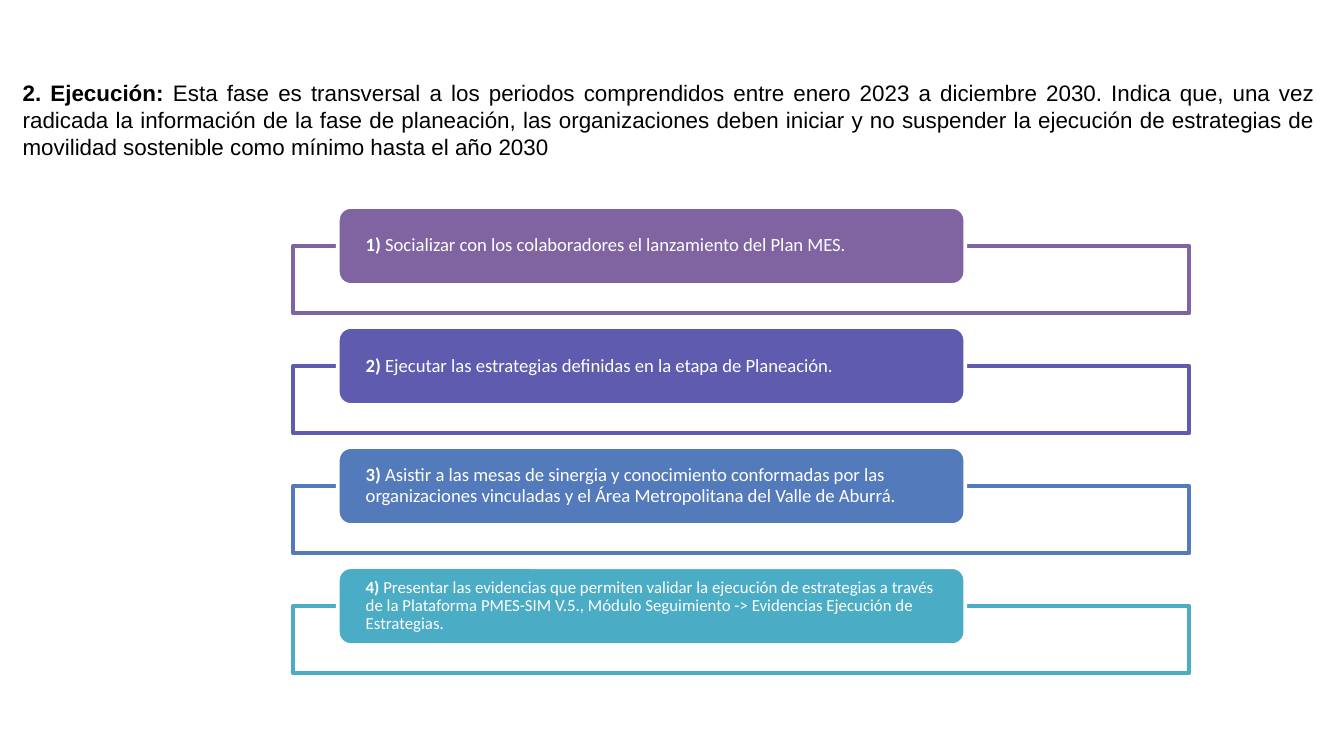
from dataclasses import dataclass

import pptx
import pptx.dml.color
import pptx.enum.shapes
import pptx.enum.text
import pptx.oxml
import pptx.oxml.ns
import pptx.util
from pptx.util import Inches


@dataclass(frozen=True)
class Theme:
    black: str = "000000"
    white: str = "FFFFFF"
    step_colors: tuple = ("8064A2", "5F5BAE", "537ABA", "4BACC6")
    intro_font: str = "Arial"
    step_font: str = "Calibri"
    intro_size: float = 12
    step_size: float = 10
    small_size: float = 9
    line_width: float = 2
    frame_opacity: int = 90


THEME = Theme()

INTRO = (
    "2. Ejecución: ",
    "Esta fase es transversal a los periodos comprendidos entre enero 2023 a diciembre 2030. "
    "Indica que, una vez radicada la información de la fase de planeación, las organizaciones "
    "deben iniciar y no suspender la ejecución de estrategias de movilidad sostenible como "
    "mínimo hasta el año 2030",
)

STEPS = [
    ("Socializar con los colaboradores el lanzamiento del Plan MES.", THEME.step_size),
    ("Ejecutar las estrategias definidas en la etapa de Planeación.", THEME.step_size),
    ("Asistir a las mesas de sinergia y conocimiento conformadas por las organizaciones "
     "vinculadas y el Área Metropolitana del Valle de Aburrá.", THEME.step_size),
    ("Presentar las evidencias que permiten validar la ejecución de estrategias a través de "
     "la Plataforma PMES-SIM V.5., Módulo Seguimiento -> Evidencias Ejecución de Estrategias.",
     THEME.small_size),
]


def rgb(color):
    return pptx.dml.color.RGBColor.from_string(color)


def add_run(paragraph, text, font, size, color, bold):
    run = paragraph.add_run()
    run.text = text
    run.font.name = font
    run.font.size = pptx.util.Pt(size)
    run.font.color.rgb = rgb(color)
    run.font.bold = bold


def add_box(slide, preset, left, top, width, height, fill, line):
    box = slide.shapes.add_shape(
        preset, Inches(left), Inches(top), Inches(width), Inches(height))
    box.shadow.inherit = False
    box.fill.solid()
    box.fill.fore_color.rgb = rgb(fill)
    box.line.color.rgb = rgb(line)
    box.line.width = pptx.util.Pt(THEME.line_width)
    return box


def set_opacity(shape, percent):
    color = shape.fill._xPr.find(".//" + pptx.oxml.ns.qn("a:srgbClr"))
    alpha = pptx.oxml.parse_xml(
        f'<a:alpha {pptx.oxml.ns.nsdecls("a")} val="{percent * 1000}"/>')
    color.append(alpha)


def add_intro(slide, left, top, width, height):
    intro = slide.shapes.add_textbox(
        Inches(left), Inches(top), Inches(width), Inches(height))
    intro.text_frame.word_wrap = True
    paragraph = intro.text_frame.paragraphs[0]
    paragraph.alignment = pptx.enum.text.PP_ALIGN.JUSTIFY
    for text, bold in zip(INTRO, (True, False)):
        add_run(paragraph, text, THEME.intro_font, THEME.intro_size, THEME.black, bold)


def add_step(slide, left, top, width, height, number, text, size, color):
    presets = pptx.enum.shapes.MSO_SHAPE
    frame_height = 0.5
    frame = add_box(slide, presets.RECTANGLE, left, top + height - frame_height,
                    width, frame_height, THEME.white, color)
    set_opacity(frame, THEME.frame_opacity)

    label = add_box(slide, presets.ROUNDED_RECTANGLE, left + 0.05 * width, top,
                    0.7 * width, 0.58, color, THEME.white)
    body = label.text_frame
    body.word_wrap = True
    body.vertical_anchor = pptx.enum.text.MSO_ANCHOR.MIDDLE
    body.margin_left = body.margin_right = Inches(0.18)
    body.margin_top = body.margin_bottom = 0
    paragraph = body.paragraphs[0]
    paragraph.alignment = pptx.enum.text.PP_ALIGN.LEFT
    paragraph.line_spacing = 0.9
    add_run(paragraph, f"{number}) ", THEME.step_font, size, THEME.white, True)
    add_run(paragraph, text, THEME.step_font, size, THEME.white, False)


def add_steps(slide, left, top, width, height):
    step_height = 0.79
    pitch = (height - step_height) / (len(STEPS) - 1)
    for index, ((text, size), color) in enumerate(zip(STEPS, THEME.step_colors)):
        add_step(slide, left, top + index * pitch, width, step_height,
                 index + 1, text, size, color)


def main():
    presentation = pptx.Presentation()
    presentation.slide_width = Inches(10)
    presentation.slide_height = Inches(10 * 9 / 16)
    slide = presentation.slides.add_slide(presentation.slide_layouts[6])
    add_intro(slide, 0.07, 0.54, 9.82, 1)
    add_steps(slide, 2.18, 1.54, 6.67, 3.47)
    presentation.save("out.pptx")


if __name__ == "__main__":
    main()
